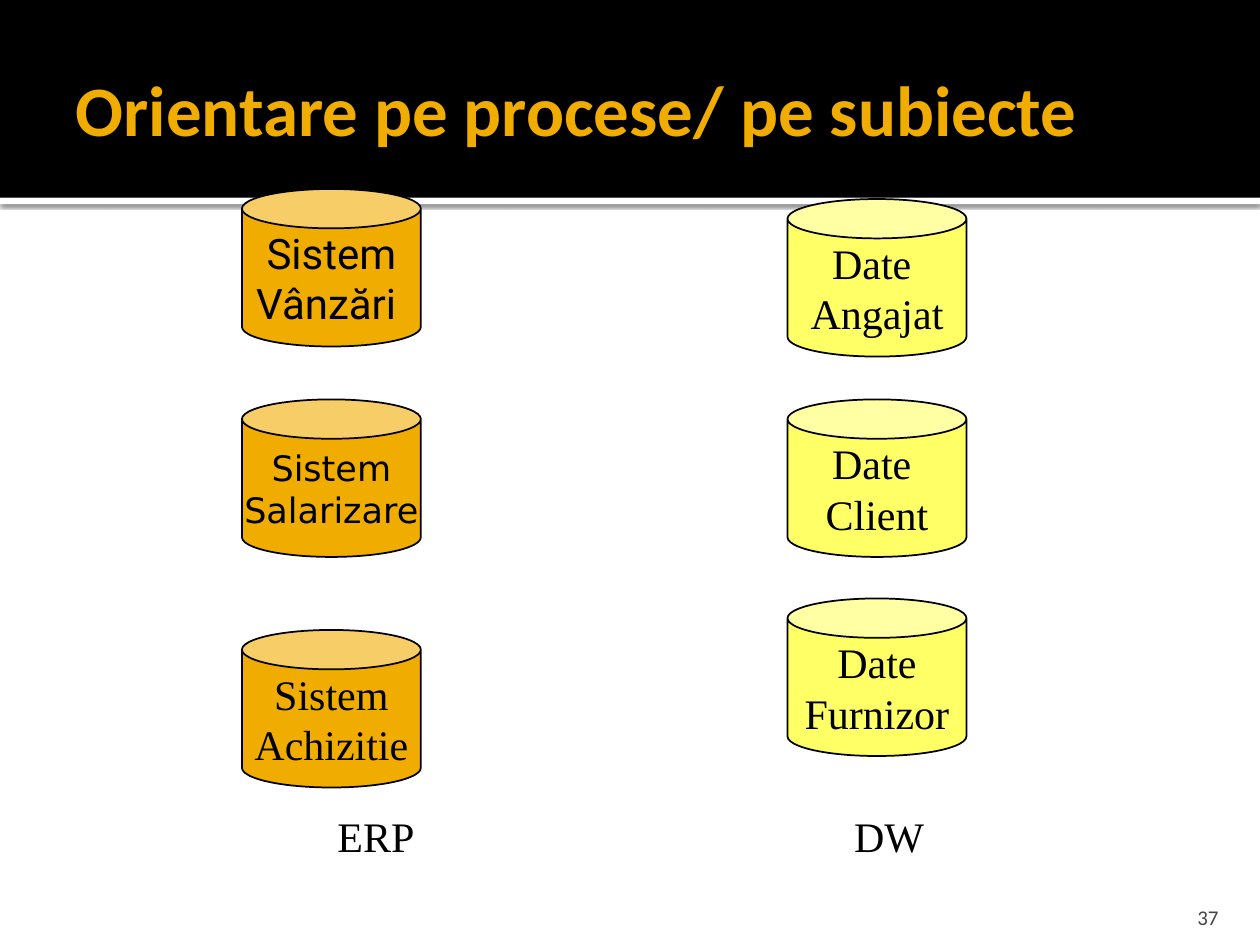
from lxml import etree
from pptx import Presentation
from pptx import util as u
from pptx.dml.color import RGBColor
from pptx.enum import shapes, text
from pptx.oxml import parse_xml
from pptx.oxml.ns import nsdecls, qn

AMBER, YELLOW, BLACK, WHITE, GREY = "F0AD00", "FFFF66", "000000", "FFFFFF", "454545"
SERIF = "Times New Roman"
CAN_WIDTH, CAN_HEIGHT = 1.42, 1.25
SYSTEMS = [
    (1.5, ["Sistem", "Vânzări "], "Roboto", 24),
    (3.17, ["Sistem", "Salarizare"], "DejaVu Sans", 20),
    (5, ["Sistem", "Achizitie"], SERIF, 24),
]
SUBJECTS = [
    (1.58, ["Date ", "Angajat"], SERIF, 24),
    (3.17, ["Date ", "Client"], SERIF, 24),
    (4.75, ["Date", "Furnizor"], SERIF, 24),
]


def color(value):
    return RGBColor.from_string(value)


def inches(*values):
    return [u.Inches(value) for value in values]


def write(frame, lines, font, size, fill, align, bold=False):
    frame.text = "\n".join(lines)
    for para in frame.paragraphs:
        para.alignment = align
        for span in para.runs:
            span.font.name = font
            span.font.size = u.Pt(size)
            span.font.bold = bold
            span.font.color.rgb = color(fill)


def set_insets(frame, left, top, right, bottom):
    frame.margin_left, frame.margin_top, frame.margin_right, frame.margin_bottom = inches(
        left, top, right, bottom)


def add_band(page, box, fill):
    band = page.shapes.add_shape(shapes.MSO_SHAPE.RECTANGLE, *inches(*box))
    band.shadow.inherit = False
    band.fill.solid()
    band.fill.fore_color.rgb = color(fill)
    band.line.fill.background()
    return band


def add_header(page, box):
    left, top, width, height = box
    strip = add_band(page, (left, top + height, width, 0.05), WHITE)
    effects = strip.element.spPr.find(qn("a:effectLst"))
    effects.append(parse_xml(
        f'<a:outerShdw {nsdecls("a")} blurRad="{u.Pt(2.5)}" dist="{u.Pt(0.8)}" dir="5400000" '
        f'algn="tl" rotWithShape="0"><a:srgbClr val="{BLACK}"><a:alpha val="60000"/>'
        '</a:srgbClr></a:outerShdw>'))
    add_band(page, box, BLACK)

    title = page.shapes.title
    title.element.getparent().append(title.element)
    title.left, title.top, title.width, title.height = inches(
        left + 0.5, top + 0.17, width - 1, height - 0.2)
    frame = title.text_frame
    frame.word_wrap = True
    frame.auto_size = text.MSO_AUTO_SIZE.NONE
    frame.vertical_anchor = text.MSO_ANCHOR.MIDDLE
    set_insets(frame, 0.1, 0.05, 0.05, 0.05)
    write(frame, ["Orientare pe procese/ pe subiecte"], "Calibri", 40.5, AMBER,
          text.PP_ALIGN.LEFT, bold=True)


def add_can_column(page, left, fill, cans):
    for top, lines, font, size in cans:
        can = page.shapes.add_shape(
            shapes.MSO_SHAPE.CAN, *inches(left, top, CAN_WIDTH, CAN_HEIGHT))
        can.adjustments[0] = 0.25
        can.shadow.inherit = False
        can.fill.solid()
        can.fill.fore_color.rgb = color(fill)
        can.line.color.rgb = color(BLACK)
        can.line.width = u.Pt(1)
        frame = can.text_frame
        frame.word_wrap = False
        frame.vertical_anchor = text.MSO_ANCHOR.MIDDLE
        write(frame, lines, font, size, BLACK, text.PP_ALIGN.CENTER)


def add_column_labels(page, box, labels, tab):
    frame = page.shapes.add_textbox(*inches(*box)).text_frame
    frame.word_wrap = True
    frame.auto_size = text.MSO_AUTO_SIZE.SHAPE_TO_FIT_TEXT
    write(frame, ["\t".join(labels)], SERIF, 24, BLACK, text.PP_ALIGN.LEFT)
    properties = frame.paragraphs[0]._p.get_or_add_pPr()
    tabs = etree.SubElement(properties, qn("a:tabLst"))
    etree.SubElement(tabs, qn("a:tab"), pos=str(u.Inches(tab)), algn="l")


def add_page_number(page, box, number):
    frame = page.shapes.add_textbox(*inches(*box)).text_frame
    frame.word_wrap = True
    frame.vertical_anchor = text.MSO_ANCHOR.BOTTOM
    set_insets(frame, 0.1, 0.05, 0.1, 0)
    write(frame, [number], "Calibri", 12, GREY, text.PP_ALIGN.RIGHT)


def main():
    deck = Presentation()
    deck.slide_width, deck.slide_height = inches(10, 7.5)
    page = deck.slides.add_slide(deck.slide_layouts.get_by_name("Title Only"))
    page.background.fill.solid()
    page.background.fill.fore_color.rgb = color(WHITE)
    add_header(page, (0, 0, 10, 1.57))
    add_page_number(page, (8.97, 7.08, 0.8, 0.3), "37")
    add_can_column(page, 1.92, AMBER, SYSTEMS)
    add_can_column(page, 6.25, YELLOW, SUBJECTS)
    add_column_labels(page, (2.58, 6.38, 5.58, 0.5), ["ERP", "DW"], 4.1)
    deck.save("out.pptx")


if __name__ == "__main__":
    main()
